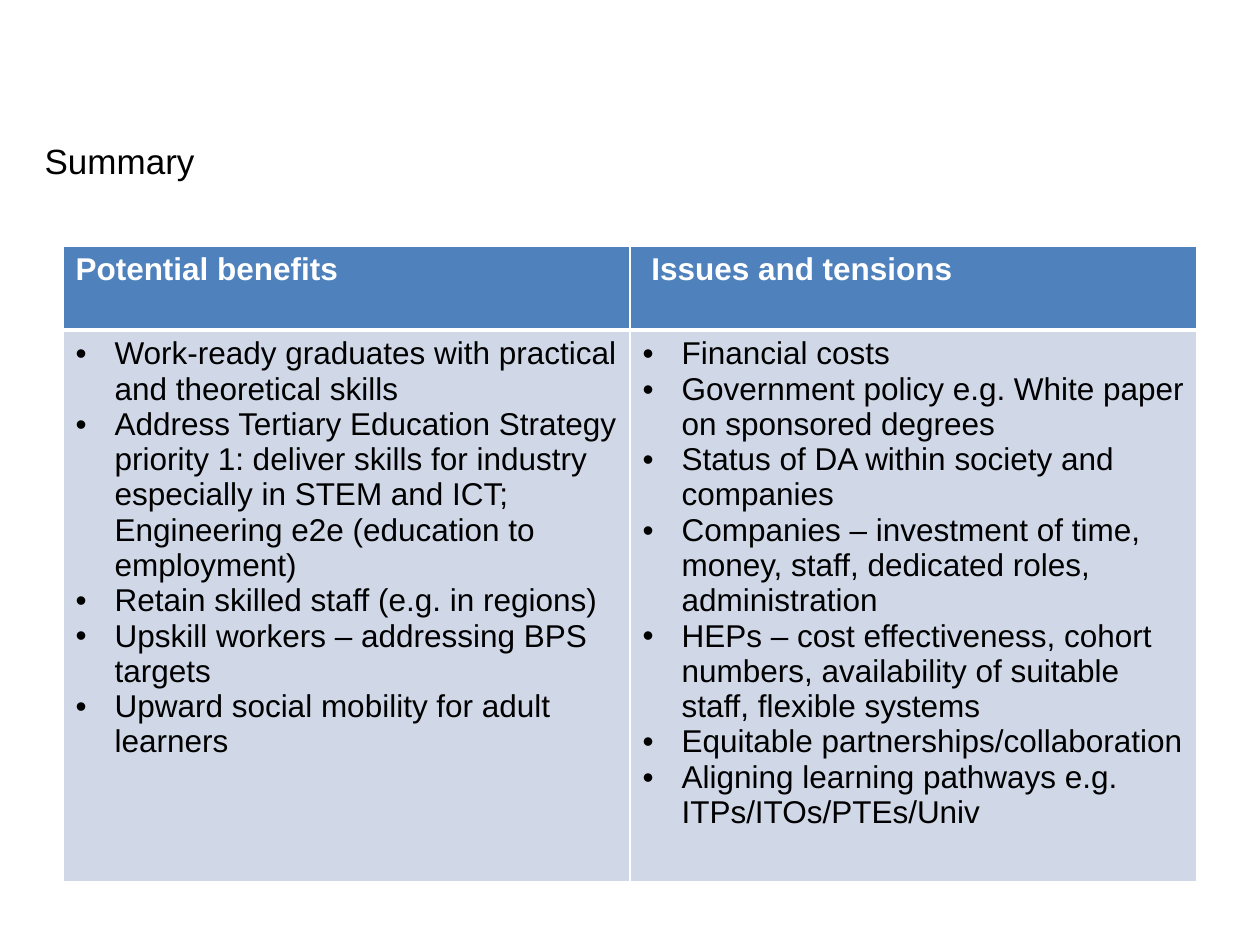
import pptx
import pptx.dml.color
import pptx.enum.text
import pptx.oxml.ns
import pptx.util
from lxml import etree

PX_PER_INCH = 126
BLACK = pptx.dml.color.RGBColor(0x00, 0x00, 0x00)
WHITE = pptx.dml.color.RGBColor(0xFF, 0xFF, 0xFF)
HEADER_BLUE = pptx.dml.color.RGBColor(0x4F, 0x81, 0xBD)
BODY_BLUE = pptx.dml.color.RGBColor(0xD0, 0xD8, 0xE8)

TITLE_ONLY_LAYOUT = 5
BULLET_INDENT = 39
THIN, THICK = 1, 3

COLUMNS = {
    "Potential benefits": [
        "Work-ready graduates with practical and theoretical skills",
        "Address Tertiary Education Strategy priority 1: deliver skills for industry "
        "especially in STEM and ICT; Engineering e2e (education to employment)",
        "Retain skilled staff (e.g. in regions)",
        "Upskill workers – addressing BPS targets",
        "Upward social mobility for adult learners",
    ],
    " Issues and tensions": [
        "Financial costs",
        "Government policy e.g. White paper on sponsored degrees",
        "Status of DA within society and companies",
        "Companies – investment of time, money, staff, dedicated roles, administration",
        "HEPs – cost effectiveness, cohort numbers, availability of suitable staff, "
        "flexible systems",
        "Equitable partnerships/collaboration",
        "Aligning learning pathways e.g. ITPs/ITOs/PTEs/Univ",
    ],
}


def px(length):
    return pptx.util.Emu(round(length * 914400 / PX_PER_INCH))


def add_bullet(paragraph):
    properties = paragraph._p.get_or_add_pPr()
    properties.set("marL", str(px(BULLET_INDENT)))
    properties.set("indent", str(-px(BULLET_INDENT)))
    etree.SubElement(properties, pptx.oxml.ns.qn("a:buFont"), typeface="Arial")
    etree.SubElement(properties, pptx.oxml.ns.qn("a:buChar"), char="•")


def write_text(frame, lines, *, font, size, color, bold=False, bullets=False):
    for index, line in enumerate(lines):
        paragraph = frame.add_paragraph() if index else frame.paragraphs[0]
        paragraph.alignment = pptx.enum.text.PP_ALIGN.LEFT
        if bullets:
            add_bullet(paragraph)
        run = paragraph.add_run()
        run.text = line
        run.font.name = font
        run.font.size = pptx.util.Pt(size)
        run.font.bold = bold
        run.font.color.rgb = color


def set_borders(cell, color, **widths):
    """Draw the sides L, R, T and B, with widths in points; call before the fill is set."""
    properties = cell._tc.get_or_add_tcPr()
    for side in "LRTB":
        border = etree.SubElement(properties, pptx.oxml.ns.qn(f"a:ln{side}"),
                                  w=str(pptx.util.Pt(widths.get(side, THIN))))
        fill = etree.SubElement(border, pptx.oxml.ns.qn("a:solidFill"))
        etree.SubElement(fill, pptx.oxml.ns.qn("a:srgbClr"), val=str(color))


class SlideBuilder:
    def __init__(self, slide, font="Arial", title_size=20, table_size=18):
        self.slide = slide
        self.font = font
        self.title_size = title_size
        self.table_size = table_size

    def title(self, text, left, top, width, height):
        title = self.slide.shapes.title
        title.left, title.top = px(left), px(top)
        title.width, title.height = px(width), px(height)
        title.text_frame.vertical_anchor = pptx.enum.text.MSO_ANCHOR.MIDDLE
        write_text(title.text_frame, [text], font=self.font,
                   size=self.title_size, color=BLACK)

    def comparison_table(self, columns, left, top, column_width, row_heights):
        table = self.slide.shapes.add_table(
            len(row_heights), len(columns), px(left), px(top),
            px(column_width * len(columns)), px(sum(row_heights))).table
        for row, height in zip(table.rows, row_heights):
            row.height = px(height)
        for index, (heading, points) in enumerate(columns.items()):
            table.columns[index].width = px(column_width)
            header, body = table.cell(0, index), table.cell(1, index)
            set_borders(header, WHITE, B=THICK)
            set_borders(body, WHITE, T=THICK)
            self.fill_cell(header, [heading], HEADER_BLUE, color=WHITE, bold=True)
            self.fill_cell(body, points, BODY_BLUE, color=BLACK, bullets=True)

    def fill_cell(self, cell, lines, background, **text_format):
        cell.fill.solid()
        cell.fill.fore_color.rgb = background
        write_text(cell.text_frame, lines, font=self.font,
                   size=self.table_size, **text_format)


def main():
    presentation = pptx.Presentation()
    presentation.slide_width, presentation.slide_height = px(1260), px(945)
    layout = presentation.slide_layouts[TITLE_ONLY_LAYOUT]
    builder = SlideBuilder(presentation.slides.add_slide(layout))
    builder.title("Summary", left=32, top=105, width=483, height=110)
    builder.comparison_table(COLUMNS, left=63, top=246, column_width=567,
                             row_heights=[84, 552])
    presentation.save("out.pptx")


if __name__ == "__main__":
    main()
